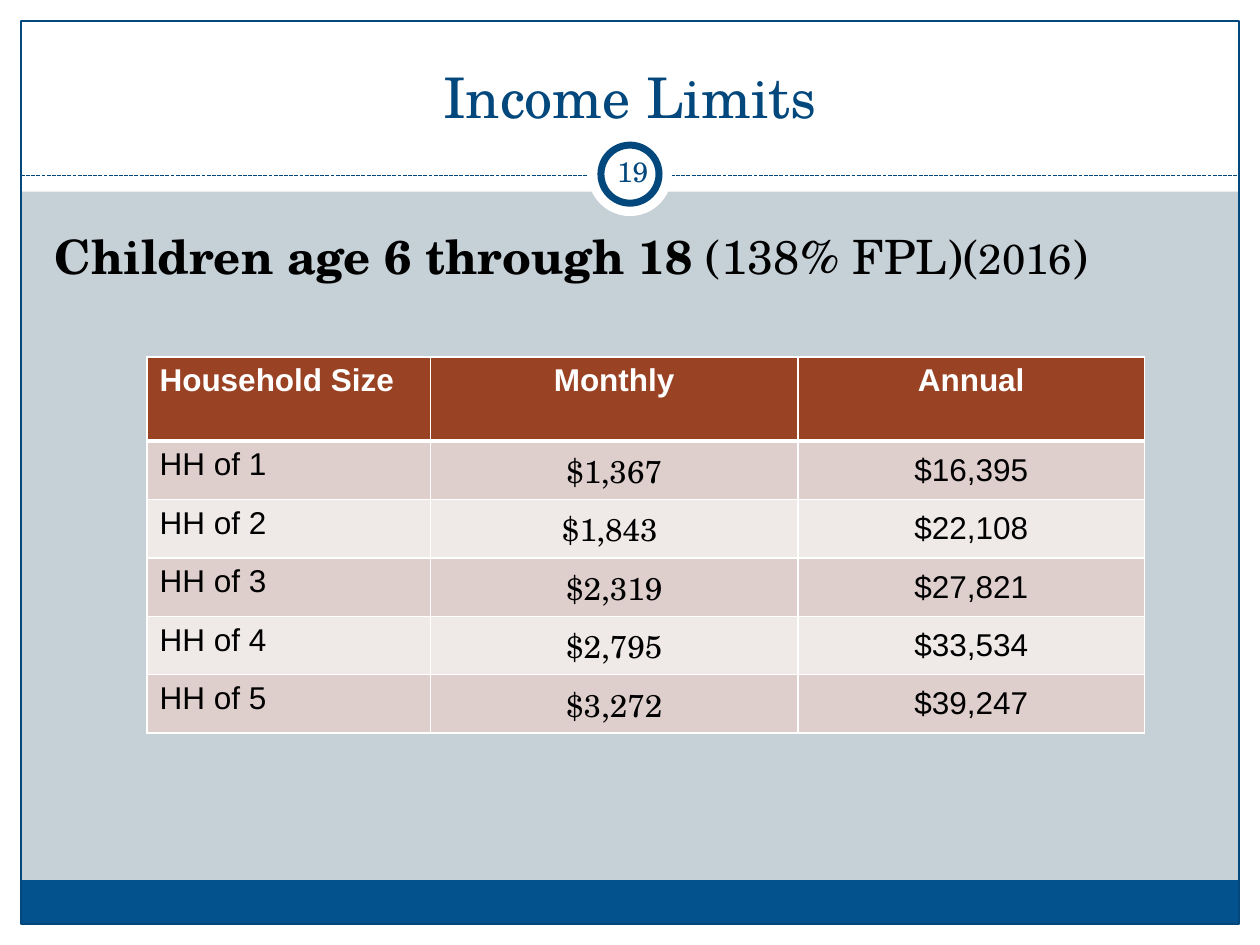
import pptx
import pptx.util
import pptx.dml.color
import pptx.enum.dml
import pptx.enum.shapes
import pptx.enum.text
import pptx.oxml
import pptx.oxml.ns
import lxml.etree

Pt = pptx.util.Pt
RGBColor = pptx.dml.color.RGBColor
MSO_SHAPE = pptx.enum.shapes.MSO_SHAPE
PP_ALIGN = pptx.enum.text.PP_ALIGN
MSO_ANCHOR = pptx.enum.text.MSO_ANCHOR
qn = pptx.oxml.ns.qn

COLORS = {
    "background": "C5D1D7", "white": "FFFFFF", "black": "000000", "navy": "03487C",
    "footer": "03528D", "header": "994224", "odd": "DECFCD", "even": "EFE9E8",
}
SERIF = "TeX Gyre Schola"
SANS = "Arial"


def color(name):
    return RGBColor.from_string(COLORS[name])


def add_text(paragraph, text, color_name, **font_values):
    run = paragraph.add_run()
    run.text = text
    run.font.color.rgb = color(color_name)
    for name, value in font_values.items():
        setattr(run.font, name, value)


presentation = pptx.Presentation()
presentation.slide_width, presentation.slide_height = Pt(720), Pt(540)
slide = presentation.slides.add_slide(presentation.slide_layouts[1])
slide.background.fill.solid()
slide.background.fill.fore_color.rgb = color("background")

# Frame, bands and number badge: kind, left, top, width, height, fill, line width
decorations = [
    (MSO_SHAPE.RECTANGLE, 0, 528, 720, 12, "white", None),
    (MSO_SHAPE.RECTANGLE, 0, 0, 720, 109.5, "white", None),
    (MSO_SHAPE.RECTANGLE, 0, 0, 12, 540, "white", None),
    (MSO_SHAPE.RECTANGLE, 708, 0, 12, 540, "white", None),
    (MSO_SHAPE.RECTANGLE, 11.75, 503, 696, 25, "footer", None),
    (MSO_SHAPE.RECTANGLE, 12, 12, 696, 516, None, 0.75),
    (MSO_SHAPE.OVAL, 336, 75.5, 48, 48, "white", None),
    (MSO_SHAPE.OVAL, 343.4, 82.9, 33.2, 33.2, "white", 4),
]
for kind, left, top, width, height, fill, line_width in decorations:
    if kind == MSO_SHAPE.OVAL and line_width is None:
        divider = slide.shapes.add_connector(
            pptx.enum.shapes.MSO_CONNECTOR.STRAIGHT, Pt(12), Pt(100.5), Pt(708), Pt(100.5))
        divider.line.color.rgb = color("navy")
        divider.line.width = Pt(0.75)
        divider.line.dash_style = pptx.enum.dml.MSO_LINE.SQUARE_DOT
        # SQUARE_DOT is written as sysDot; the divider needs the longer sysDash
        divider.line._ln.find(qn("a:prstDash")).set("val", "sysDash")
        lxml.etree.SubElement(divider._element.spPr, qn("a:effectLst"))
    shape = slide.shapes.add_shape(kind, Pt(left), Pt(top), Pt(width), Pt(height))
    shape.shadow.inherit = False
    if fill:
        shape.fill.solid()
        shape.fill.fore_color.rgb = color(fill)
    else:
        shape.fill.background()
    if line_width:
        shape.line.color.rgb = color("navy")
        shape.line.width = Pt(line_width)
    else:
        shape.line.fill.background()

# Title, body and slide number, in front of the bands
title = slide.shapes.title
body = slide.placeholders[1]
number = slide.shapes.add_textbox(Pt(343.5), Pt(80.5), Pt(36), Pt(34.5))
boxes = [
    (title, (24, 18, 672, 60), MSO_ANCHOR.BOTTOM),
    (body, (24, 126, 669.5, 390), MSO_ANCHOR.TOP),
    (number, (343.5, 80.5, 36, 34.5), MSO_ANCHOR.MIDDLE),
]
for shape, box, anchor in boxes:
    for name, value in zip(("left", "top", "width", "height"), box):
        setattr(shape, name, Pt(value))
    shape.text_frame.word_wrap = True
    shape.text_frame.auto_size = pptx.enum.text.MSO_AUTO_SIZE.NONE
    shape.text_frame.vertical_anchor = anchor
    slide.shapes._spTree.append(shape._element)
for side in ("left", "top", "right", "bottom"):
    setattr(number.text_frame, f"margin_{side}", Pt(3.6))

for shape, text, size in ((title, "Income Limits", 32), (number, "19", 16)):
    paragraph = shape.text_frame.paragraphs[0]
    paragraph.alignment = PP_ALIGN.CENTER
    add_text(paragraph, text, "navy", name=SERIF, size=Pt(size))

paragraph = body.text_frame.paragraphs[0]
properties = paragraph._p.get_or_add_pPr()
properties.set("marL", "0")
properties.set("indent", "0")
lxml.etree.SubElement(properties, qn("a:buNone"))
for text, size, bold in (("Children age 6 through 18 ", 27, True), ("(138% FPL)(", 27, False),
                         ("2016", 24, False), (")", 27, False)):
    add_text(paragraph, text, "black", name=SERIF, size=Pt(size), bold=bold)

# Income table
rows = [
    ("Household Size", "Monthly", "Annual"),
    ("HH of 1", "$1,367", "$16,395"),
    ("HH of 2", "$1,843 ", "$22,108"),
    ("HH of 3", "$2,319", "$27,821"),
    ("HH of 4", "$2,795", "$33,534"),
    ("HH of 5", "$3,272", "$39,247"),
]
table = slide.shapes.add_table(len(rows), 3, Pt(84), Pt(204), Pt(570), Pt(215)).table
for column, width in zip(table.columns, (162, 210, 198)):
    column.width = Pt(width)

for row_index, values in enumerate(rows):
    is_header = row_index == 0
    table.rows[row_index].height = Pt(48 if is_header else 33.4)
    fill = "header" if is_header else ("odd" if row_index % 2 else "even")
    for column_index, text in enumerate(values):
        cell = table.cell(row_index, column_index)
        is_amount = column_index > 0 and not is_header
        is_monthly = column_index == 1 and not is_header
        cell.vertical_anchor = MSO_ANCHOR.MIDDLE if is_amount else MSO_ANCHOR.TOP
        if is_monthly:
            for side, margin in (("left", 0.75), ("top", 0.75), ("right", 0.75), ("bottom", 0)):
                setattr(cell, f"margin_{side}", Pt(margin))
        paragraph = cell.text_frame.paragraphs[0]
        paragraph.alignment = PP_ALIGN.CENTER if column_index else PP_ALIGN.LEFT
        add_text(paragraph, text, "white" if is_header else "black",
                 name=SERIF if is_monthly else SANS, size=Pt(18), bold=is_header)
        # Borders come before the fill in the cell properties
        cell_properties = cell._tc.get_or_add_tcPr()
        for edge in ("L", "R", "T", "B"):
            thick = (is_header and edge == "B") or (row_index == 1 and edge == "T")
            border = lxml.etree.SubElement(
                cell_properties, qn(f"a:ln{edge}"), w=str(Pt(3 if thick else 1)))
            border_fill = lxml.etree.SubElement(border, qn("a:solidFill"))
            lxml.etree.SubElement(border_fill, qn("a:srgbClr"), val=COLORS["white"])
        cell.fill.solid()
        cell.fill.fore_color.rgb = color(fill)

presentation.save("out.pptx")
